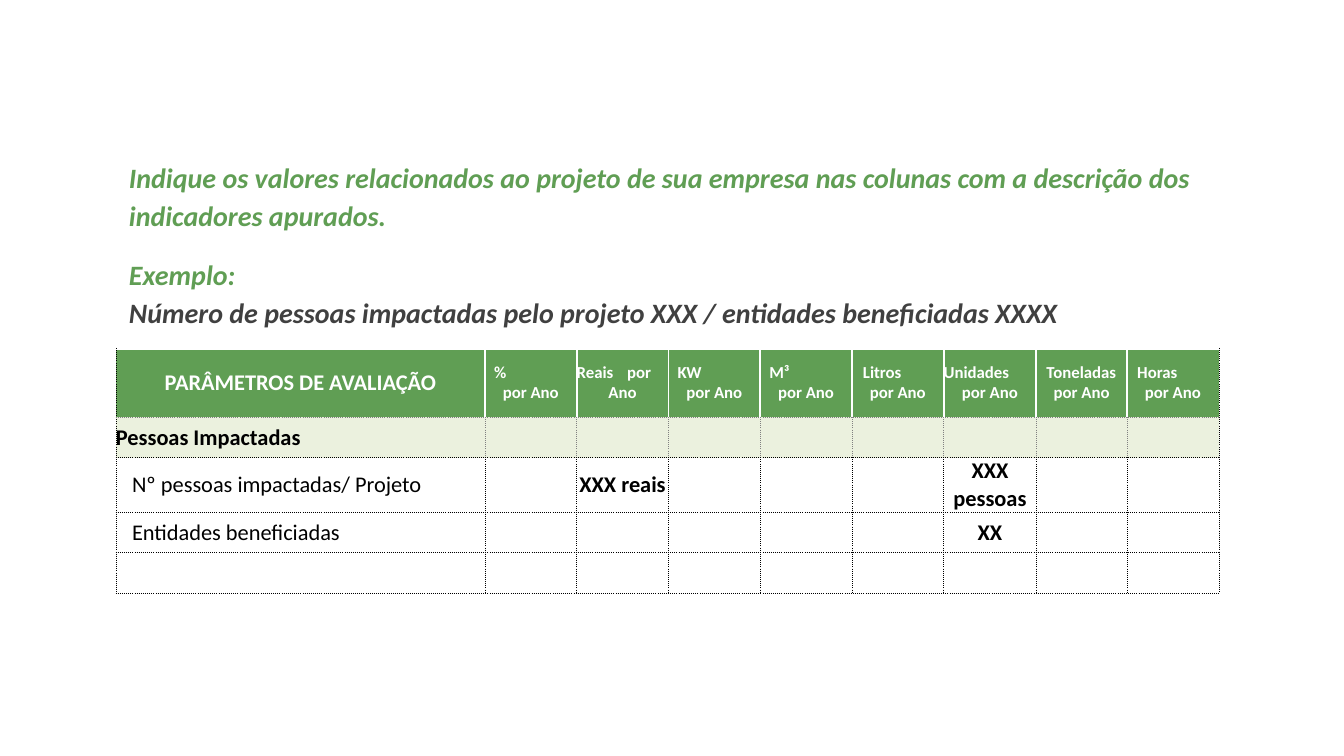
from dataclasses import dataclass

from lxml import etree
from pptx import Presentation
from pptx.dml.color import RGBColor
from pptx.enum.text import MSO_ANCHOR, PP_ALIGN
from pptx.oxml.ns import qn
from pptx.util import Inches, Pt

LEFT, CENTER = PP_ALIGN.LEFT, PP_ALIGN.CENTER
MIDDLE = MSO_ANCHOR.MIDDLE


@dataclass(frozen=True)
class Theme:
    font: str = "Calibri"
    green: str = "609E54"
    pale_green: str = "EBF1DE"
    white: str = "FFFFFF"
    black: str = "000000"
    gray: str = "808080"
    dark_gray: str = "404040"
    intro_size: int = 20
    body_size: int = 16
    unit_size: int = 12


THEME = Theme()
DOTTED = (THEME.black, 0.5, "sysDot")
GRAY_DOTTED = (THEME.gray, 0.5, "sysDot")
WHITE_SOLID = (THEME.white, 1.5, "solid")

INSTRUCTION = ("Indique os valores relacionados ao projeto de sua empresa nas colunas "
               "com a descrição dos indicadores apurados.")
EXAMPLE = ("Exemplo:\v"
           "Número de pessoas impactadas pelo projeto XXX / entidades beneficiadas XXXX")

# Upper line, its indent in inches, lower line
UNITS = [
    ("%", 0.09, "por Ano"),
    ("Reais\tpor", 0, "Ano"),
    ("KW", 0.09, "por Ano"),
    ("M³", 0.09, "por Ano"),
    ("Litros", 0.11, "por Ano"),
    ("Unidades", 0, "por Ano"),
    ("Toneladas", 0.1, "por Ano"),
    ("Horas", 0.1, "por Ano"),
]
CATEGORY = "Pessoas Impactadas"
# Label, then values by column number
INDICATORS = [
    ("Nº pessoas impactadas/ Projeto", {2: "XXX reais", 6: "XXX pessoas"}),
    ("Entidades beneficiadas", {6: "XX"}),
    ("", {}),
]
COLUMN_WIDTHS = [3.66, 0.91, 0.91, 0.91, 0.91, 0.91, 0.92, 0.9, 0.91]
ROW_HEIGHTS = [0.68, 0.4, 0.4, 0.4, 0.4]


def format_runs(paragraph, size, color, bold=True, italic=False):
    for run in paragraph.runs:
        run.font.name = THEME.font
        run.font.size = Pt(size)
        run.font.bold = bold
        run.font.italic = italic
        run.font.color.rgb = RGBColor.from_string(color)


def style_cell(cell, fill, left, right, top, bottom):
    cell.margin_left = cell.margin_right = cell.margin_top = cell.margin_bottom = 0
    cell.vertical_anchor = MIDDLE
    properties = cell._tc.get_or_add_tcPr()
    sides = {"a:lnL": left, "a:lnR": right, "a:lnT": top, "a:lnB": bottom}
    for tag, (color, width, dash) in sides.items():
        line = etree.SubElement(properties, qn(tag), w=str(Pt(width)))
        solid = etree.SubElement(line, qn("a:solidFill"))
        etree.SubElement(solid, qn("a:srgbClr"), val=color)
        etree.SubElement(line, qn("a:prstDash"), val=dash)
    cell.fill.solid()
    cell.fill.fore_color.rgb = RGBColor.from_string(fill)


def write_cell(cell, text, color=THEME.black, bold=True, align=CENTER):
    paragraph = cell.text_frame.paragraphs[0]
    paragraph.text = text
    paragraph.alignment = align
    format_runs(paragraph, THEME.body_size, color, bold)


def write_unit(cell, unit, indent, period, width):
    cell.text_frame.text = f"{unit}\n{period}"
    upper, lower = cell.text_frame.paragraphs
    properties = upper._p.get_or_add_pPr()
    properties.set("marL", str(Inches(indent)))
    properties.set("indent", "0")
    if "\t" in unit:
        tabs = etree.SubElement(properties, qn("a:tabLst"))
        etree.SubElement(tabs, qn("a:tab"), pos=str(Inches(width - 0.01)), algn="r")
    upper.alignment = LEFT
    lower.alignment = CENTER
    for paragraph in (upper, lower):
        format_runs(paragraph, THEME.unit_size, THEME.white)


def add_instructions(slide, left, top, width, height):
    box = slide.shapes.add_textbox(Inches(left), Inches(top), Inches(width), Inches(height))
    frame = box.text_frame
    frame.word_wrap = True
    instruction, example = frame.paragraphs[0], frame.add_paragraph()
    instruction.text = INSTRUCTION
    example.text = EXAMPLE
    example.space_before = Pt(10)
    for paragraph in (instruction, example):
        paragraph.line_spacing = 1.15
        paragraph.space_after = Pt(4)
        format_runs(paragraph, THEME.intro_size, THEME.green, italic=True)
    example.runs[-1].font.color.rgb = RGBColor.from_string(THEME.dark_gray)


def add_indicator_table(slide, left, top, width, height):
    table = slide.shapes.add_table(len(ROW_HEIGHTS), len(COLUMN_WIDTHS), Inches(left),
                                   Inches(top), Inches(width), Inches(height)).table
    table.first_row = table.horz_banding = False
    for column, column_width in zip(table.columns, COLUMN_WIDTHS):
        column.width = Inches(column_width)
    for row, row_height in zip(table.rows, ROW_HEIGHTS):
        row.height = Inches(row_height)

    # Fills and borders: header, category, indicators
    last = len(COLUMN_WIDTHS) - 1
    looks = [
        (THEME.green, WHITE_SOLID, WHITE_SOLID, GRAY_DOTTED),
        (THEME.pale_green, GRAY_DOTTED, GRAY_DOTTED, DOTTED),
        (THEME.white, DOTTED, DOTTED, DOTTED),
    ]
    for r in range(len(ROW_HEIGHTS)):
        fill, inner, upper, lower = looks[min(r, 2)]
        for c in range(last + 1):
            style_cell(table.cell(r, c), fill, DOTTED if c == 0 else inner,
                       DOTTED if c == last else inner, upper, lower)

    # Header and category
    write_cell(table.cell(0, 0), "PARÂMETROS DE AVALIAÇÃO", THEME.white)
    for c, (unit, indent, period) in enumerate(UNITS, start=1):
        write_unit(table.cell(0, c), unit, indent, period, COLUMN_WIDTHS[c])
    write_cell(table.cell(1, 0), CATEGORY, align=LEFT)

    # Indicators
    for r, (label, values) in enumerate(INDICATORS, start=2):
        label_cell = table.cell(r, 0)
        label_cell.margin_left = Inches(0.16)
        write_cell(label_cell, label, bold=False, align=LEFT)
        for c, value in values.items():
            write_cell(table.cell(r, c), value)


def main():
    presentation = Presentation()
    presentation.slide_width = Inches(13.33)
    presentation.slide_height = Inches(7.5)
    slide = presentation.slides.add_slide(presentation.slide_layouts[6])
    add_indicator_table(slide, 1.15, 3.46, sum(COLUMN_WIDTHS), sum(ROW_HEIGHTS))
    add_instructions(slide, 1.18, 1.49, 10.95, 1.81)
    presentation.save("out.pptx")


if __name__ == "__main__":
    main()
